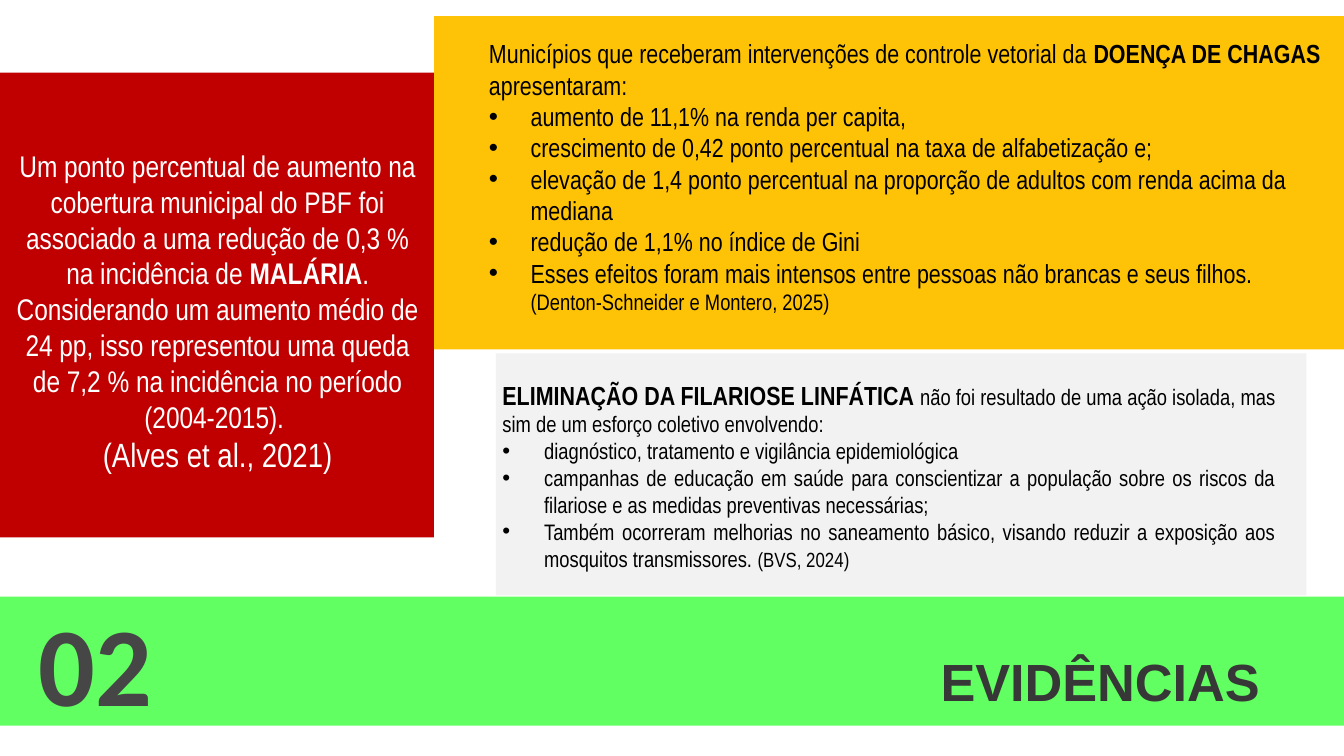
from pptx import Presentation
from pptx.dml.color import RGBColor
from pptx.enum.shapes import MSO_SHAPE as SHAPE
from pptx.enum.text import MSO_ANCHOR as ANCHOR, PP_ALIGN as ALIGN
from pptx.oxml.ns import qn
from pptx.util import Inches, Pt
from lxml.etree import SubElement

COLORS = {
    "gray": "F2F2F2", "yellow": "FEC306", "green": "00FF00", "red": "C00000",
    "black": "000000", "white": "FFFFFF", "title": "373737", "number": "464646",
}
NARROW = "Arial Narrow"
INDENT = Inches(0.31)


def rgb(name):
    return RGBColor.from_string(COLORS[name])


def add_panel(s, box, color, alpha=None):
    """Add a borderless rectangle; alpha is its opacity in percent."""
    sp = s.shapes.add_shape(SHAPE.RECTANGLE, *map(Inches, box))
    sp.shadow.inherit = False
    sp.line.fill.background()
    sp.fill.solid()
    sp.fill.fore_color.rgb = rgb(color)
    if alpha is not None:
        clr = sp.fill._xPr.find(qn("a:solidFill"))[0]
        SubElement(clr, qn("a:alpha")).set("val", str(alpha * 1000))


def add_text_box(s, box, anchor=ANCHOR.TOP, inset=None):
    tf = s.shapes.add_textbox(*map(Inches, box)).text_frame
    tf.word_wrap = True
    tf.vertical_anchor = anchor
    if inset is not None:
        tf.margin_left = tf.margin_right = Inches(inset)
        tf.margin_top = tf.margin_bottom = Inches(inset)
    return tf


def add_paragraph(tf, align=ALIGN.LEFT, bullet=False):
    first = tf.paragraphs[0]
    p = tf.add_paragraph() if first.runs else first
    p.alignment = align
    if bullet:
        pPr = p._p.get_or_add_pPr()
        pPr.set("marL", str(INDENT))
        pPr.set("indent", str(-INDENT))
        clr = SubElement(pPr, qn("a:buClr"))
        SubElement(clr, qn("a:srgbClr")).set("val", COLORS["black"])
        SubElement(pPr, qn("a:buFont")).set("typeface", "Arial")
        SubElement(pPr, qn("a:buChar")).set("char", "•")
    return p


def add_text(p, text, size=14, color="black", font=NARROW, bold=False):
    r = p.add_run()
    r.text = text
    r.font.size = Pt(size)
    r.font.name = font
    r.font.bold = bold
    r.font.color.rgb = rgb(color)


def add_bullets(tf, items, size, align=ALIGN.LEFT):
    """Add one bullet per item and return the last paragraph."""
    for item in items:
        p = add_paragraph(tf, align, bullet=True)
        add_text(p, item, size=size)
    return p


def add_chagas(s):
    tf = add_text_box(s, (3.54, 0.23, 6.46, 2.22))
    p = add_paragraph(tf)
    add_text(p, "Municípios que receberam intervenções de controle vetorial da ")
    add_text(p, "DOENÇA DE CHAGAS ", bold=True)
    add_text(p, "apresentaram:")
    p = add_bullets(tf, [
        "aumento de 11,1% na renda per capita,",
        "crescimento de 0,42 ponto percentual na taxa de alfabetização e;",
        "elevação de 1,4 ponto percentual na proporção de adultos com renda acima da mediana",
        "redução de 1,1% no índice de Gini",
        "Esses efeitos foram mais intensos entre pessoas não brancas e seus filhos. ",
    ], size=14)
    add_text(p, "(Denton-Schneider e Montero, 2025)", size=12)


def add_malaria(s):
    tf = add_text_box(s, (0, 1.05, 3.24, 2.56))
    p = add_paragraph(tf, ALIGN.CENTER)
    white = {"size": 16, "color": "white"}
    add_text(p, "Um ponto percentual de aumento na cobertura municipal do PBF foi "
                "associado a uma redução de 0,3 % na incidência de ", **white)
    add_text(p, "MALÁRIA", bold=True, **white)
    add_text(p, ". Considerando um aumento médio de 24 pp, isso representou uma queda "
                "de 7,2 % na incidência no período (2004-2015). ", **white)
    p.add_line_break()
    add_text(p, "(Alves et al., 2021)", size=18, color="white")


def add_filariasis(s):
    tf = add_text_box(s, (3.64, 2.77, 5.95, 1.55))
    p = add_paragraph(tf, ALIGN.JUSTIFY)
    add_text(p, "ELIMINAÇÃO DA FILARIOSE LINFÁTICA ", bold=True)
    add_text(p, "não foi resultado de uma ação isolada, mas sim de um esforço "
                "coletivo envolvendo: ", size=12)
    p = add_bullets(tf, [
        "diagnóstico, tratamento e vigilância epidemiológica",
        "campanhas de educação em saúde para conscientizar a população sobre os riscos "
        "da filariose e as medidas preventivas necessárias;",
        "Também ocorreram melhorias no saneamento básico, visando reduzir a exposição "
        "aos mosquitos transmissores. ",
    ], size=12, align=ALIGN.JUSTIFY)
    add_text(p, "(BVS, 2024)", size=11)


def add_footer(s):
    tf = add_text_box(s, (6.9, 4.72, 4.59, 0.68), ANCHOR.BOTTOM, inset=0.1)
    add_text(add_paragraph(tf), "EVIDÊNCIAS", size=28, color="title", font="Arial", bold=True)
    tf = add_text_box(s, (-0.08, 4.61, 1.31, 0.63), ANCHOR.MIDDLE, inset=0.1)
    add_text(add_paragraph(tf, ALIGN.RIGHT), "02", size=60, color="number",
             font="Calibri", bold=True)


def main():
    prs = Presentation()
    prs.slide_width, prs.slide_height = Inches(10), Inches(10 * 9 / 16)
    s = prs.slides.add_slide(prs.slide_layouts[6])
    add_panel(s, (3.69, 2.63, 6.03, 1.8), "gray")
    add_panel(s, (3.23, 0.12, 6.77, 2.48), "yellow")
    add_panel(s, (0, 4.44, 10, 0.96), "green", alpha=62)
    add_footer(s)
    add_chagas(s)
    add_panel(s, (0, 0.54, 3.23, 3.46), "red")
    add_malaria(s)
    add_filariasis(s)
    prs.save("out.pptx")


if __name__ == "__main__":
    main()
